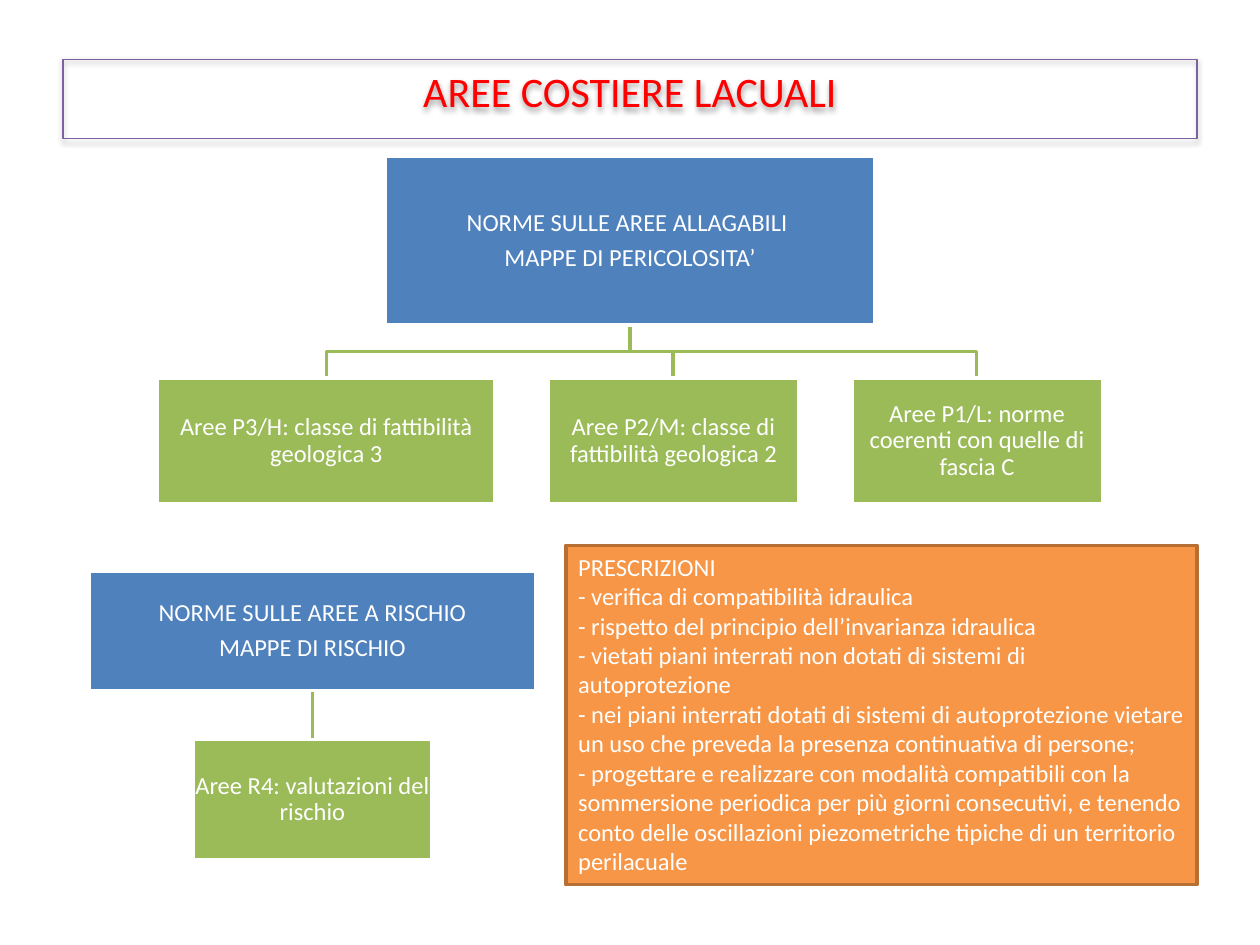
from lxml import etree
from pptx import Presentation
from pptx.dml.color import RGBColor
from pptx.enum.shapes import MSO_CONNECTOR, MSO_SHAPE
from pptx.enum.text import MSO_ANCHOR, PP_ALIGN
from pptx.oxml import parse_xml
from pptx.oxml.ns import qn
from pptx.util import Inches, Pt

RECT = MSO_SHAPE.RECTANGLE
STRAIGHT = MSO_CONNECTOR.STRAIGHT
LEFT, CENTER = PP_ALIGN.LEFT, PP_ALIGN.CENTER
TOP, MIDDLE = MSO_ANCHOR.TOP, MSO_ANCHOR.MIDDLE

# Content
TITLE = "AREE COSTIERE LACUALI"
TREES = [
    {
        "root": "NORME SULLE AREE ALLAGABILI \nMAPPE DI PERICOLOSITA’",
        "mid": 5.0, "top": 1.24, "size": (3.89, 1.34), "gap": 0.42, "high": 1.0,
        "kids": [
            ("Aree P3/H: classe di fattibilità geologica 3", 2.68),
            ("Aree P2/M: classe di fattibilità geologica 2", 1.99),
            ("Aree P1/L: norme coerenti con quelle di fascia C", 1.99),
        ],
    },
    {
        "root": "NORME SULLE AREE A RISCHIO\nMAPPE DI RISCHIO",
        "mid": 2.48, "top": 4.53, "size": (3.55, 0.95), "gap": 0.39, "high": 0.95,
        "kids": [("Aree R4: valutazioni del rischio", 1.89)],
    },
]
RULES = [
    "PRESCRIZIONI",
    "- verifica di compatibilità idraulica",
    "- rispetto del principio dell’invarianza idraulica",
    "- vietati piani interrati non dotati di sistemi di autoprotezione",
    "- nei piani interrati dotati di sistemi di autoprotezione vietare un uso "
    "che preveda la presenza continuativa di persone;",
    "- progettare e realizzare con modalità compatibili con la sommersione "
    "periodica per più giorni consecutivi, e tenendo conto delle oscillazioni "
    "piezometriche tipiche di un territorio perilacuale",
]


class Theme:
    font = "Calibri"
    head, body = 24, 14
    red, white, violet = "FF0000", "FFFFFF", "7D60A0"
    blue, green = "4F81BD", "9BBB59"
    orange, brown = "F79646", "B76F34"
    thin, thick = 0.75, 2


SHADOW = (
    '<a:effectLst xmlns:a="http://schemas.openxmlformats.org/drawingml/2006/main">'
    '<a:outerShdw blurRad="{}" dist="{}" dir="5400000" rotWithShape="0">'
    '<a:srgbClr val="000000"><a:alpha val="38000"/></a:srgbClr>'
    "</a:outerShdw></a:effectLst>"
).format(Pt(3.1), Pt(1.6))

deck = Presentation()
deck.slide_width, deck.slide_height = Inches(10), Inches(7.5)
slide = deck.slides.add_slide(deck.slide_layouts[6])
shapes = slide.shapes


def stroke(line, color, width):
    line.color.rgb = RGBColor.from_string(color)
    line.width = Pt(width)


def add_box(place, text, fill, edge, width=Theme.thick, size=Theme.body,
            color=Theme.white, align=LEFT, anchor=TOP):
    box = shapes.add_shape(RECT, *map(Inches, place))
    box.shadow.inherit = False
    if fill:
        box.fill.solid()
        box.fill.fore_color.rgb = RGBColor.from_string(fill)
    else:
        box.fill.background()
    stroke(box.line, edge, width)
    frame = box.text_frame
    frame.word_wrap = True
    frame.vertical_anchor = anchor
    frame.text = text
    for para in frame.paragraphs:
        para.alignment = align
        for run in para.runs:
            run.font.name = Theme.font
            run.font.size = Pt(size)
            run.font.color.rgb = RGBColor.from_string(color)
    return box


def add_node(place, text, fill):
    frame = add_box(place, text, fill, Theme.white,
                    align=CENTER, anchor=MIDDLE).text_frame
    frame.margin_left = frame.margin_right = Inches(0.01)
    frame.margin_top = frame.margin_bottom = Inches(0.01)
    for para in frame.paragraphs:
        para.line_spacing = 0.9
        para.space_after = Pt(0.35 * Theme.body)


def add_link(start, end):
    (x1, y1), (x2, y2) = start, end
    if x1 == x2:
        link = shapes.add_connector(STRAIGHT, *map(Inches, (x1, y1, x2, y2)))
        etree.SubElement(link._element.spPr, qn("a:effectLst"))
    else:
        bend = (y1 + y2) / 2
        pen = shapes.build_freeform(Inches(x1), Inches(y1))
        turns = [(x1, bend), (x2, bend), (x2, y2)]
        pen.add_line_segments([(Inches(x), Inches(y)) for x, y in turns], close=False)
        link = pen.convert_to_shape()
        link.shadow.inherit = False
        link.fill.background()
    stroke(link.line, Theme.green, Theme.thick)


def add_tree(tree):
    mid, top, gap = tree["mid"], tree["top"], tree["gap"]
    wide, tall = tree["size"]
    base = top + tall
    row = base + gap
    # Children share one row, centred below the root
    span = sum(w for _, w in tree["kids"]) + gap * (len(tree["kids"]) - 1)
    left, nodes = mid - span / 2, []
    for text, w in tree["kids"]:
        nodes.append(((left, row, w, tree["high"]), text))
        left += w + gap
    # Links lie behind the boxes
    for (x, y, w, _), _ in nodes:
        add_link((mid, base), (round(x + w / 2, 2), y))
    add_node((mid - wide / 2, top, wide, tall), tree["root"], Theme.blue)
    for place, text in nodes:
        add_node(place, text, Theme.green)


# Title frame
title = add_box((0.5, 0.47, 9, 0.63), TITLE, None, Theme.violet, Theme.thin,
                Theme.head, Theme.red, CENTER)
props = title._element.spPr
props.replace(props.find(qn("a:effectLst")), parse_xml(SHADOW))

# Trees
for tree in TREES:
    add_tree(tree)

# Prescriptions
add_box((4.49, 4.33, 5.01, 2.69), "\n".join(RULES), Theme.orange, Theme.brown)

deck.save("out.pptx")
